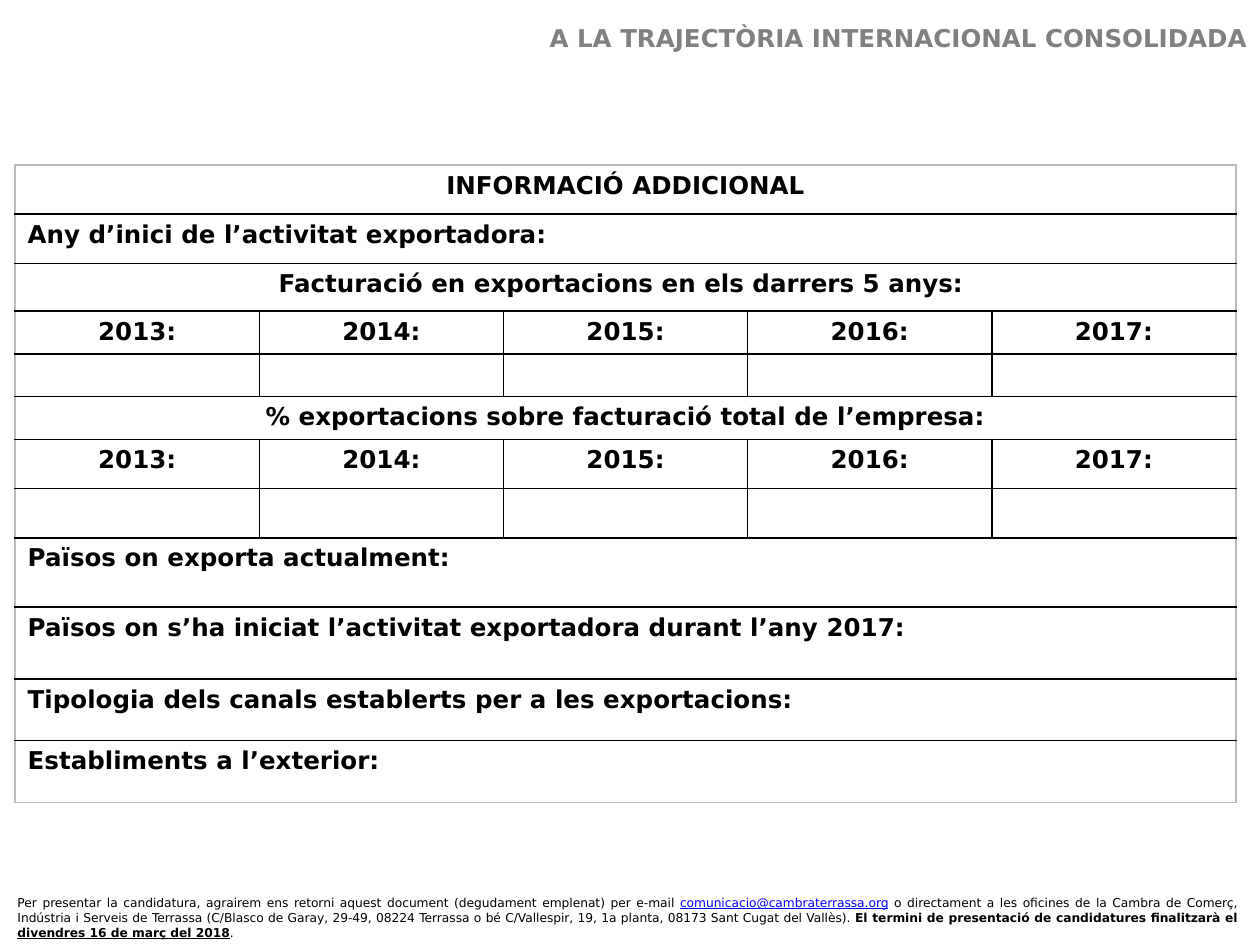
"""Build the additional-information form for the export award."""
from lxml import etree
from pptx import Presentation
from pptx.dml.color import RGBColor
from pptx.enum import shapes, text
from pptx.oxml.ns import qn
from pptx.util import Inches, Pt

FONT = "DejaVu Sans"
HUES = {"ink": "000000", "grey": "808080", "edge": "BBBBBB",
        "link": "0000FF", "paper": "FFFFFF"}
LEFT, MID, RIGHT, FULL = (text.PP_ALIGN.LEFT, text.PP_ALIGN.CENTER,
                          text.PP_ALIGN.RIGHT, text.PP_ALIGN.JUSTIFY)
TITLE = "A LA TRAJECTÒRIA INTERNACIONAL CONSOLIDADA"
YEARS = [f"{year}:" for year in range(2013, 2018)]
BLANK = [""] * len(YEARS)
ROWS = [
    (0.39, MID, ["INFORMACIÓ ADDICIONAL"]),
    (0.39, LEFT, ["Any d’inici de l’activitat exportadora:"]),
    (0.38, MID, ["Facturació en exportacions en els darrers 5 anys: "]),
    (0.34, MID, YEARS),
    (0.34, MID, BLANK),
    (0.34, MID, ["% exportacions sobre facturació total de l’empresa:"]),
    (0.39, MID, YEARS),
    (0.39, MID, BLANK),
    (0.55, LEFT, ["Països on exporta actualment:"]),
    (0.57, LEFT, ["Països on s’ha iniciat l’activitat exportadora durant l’any 2017:"]),
    (0.49, LEFT, ["Tipologia dels canals establerts per a les exportacions:"]),
    (0.49, LEFT, ["Establiments a l’exterior:"]),
]
NOTE = [
    ("Per presentar la candidatura, agrairem ens retorni aquest document "
     "(degudament emplenat) per e-mail ", "ink", False, False),
    ("comunicacio@cambraterrassa.org", "link", False, True),
    (" o directament a les oficines de la Cambra de Comerç, Indústria i Serveis "
     "de Terrassa (C/Blasco de Garay, 29-49, 08224 Terrassa o bé C/Vallespir, 19, "
     "1a planta, 08173 Sant Cugat del Vallès). ", "ink", False, False),
    ("El termini de presentació de candidatures finalitzarà el ", "ink", True, False),
    ("divendres 16 de març del 2018", "ink", True, True),
    (".", "ink", False, False),
]


def tint(name):
    return RGBColor.from_string(HUES[name])


def style(para, size, align, hue="ink", bold=None):
    para.alignment = align
    font = para.font
    font.name, font.size, font.bold = FONT, Pt(size), bold
    font.color.rgb = tint(hue)


def border(cell, outer):
    props = cell._tc.get_or_add_tcPr()
    for spot, side in enumerate("LRTB"):
        line = etree.Element(qn(f"a:ln{side}"), w=str(Pt(1)))
        fill = etree.SubElement(line, qn("a:solidFill"))
        hue = HUES["edge" if side in outer else "ink"]
        etree.SubElement(fill, qn("a:srgbClr"), val=hue)
        props.insert(spot, line)


def add_title(slide):
    box = slide.shapes.add_textbox(Inches(2.8), Inches(0.13), Inches(7.2), Inches(0.34))
    box.text_frame.word_wrap = True
    para = box.text_frame.paragraphs[0]
    para.text = TITLE
    style(para, 14, RIGHT, "grey", True)


def add_note(slide):
    box = slide.shapes.add_shape(shapes.MSO_SHAPE.RECTANGLE, Inches(0.04),
                                 Inches(7.06), Inches(9.88), Inches(0.4))
    box.shadow.inherit = False
    box.fill.solid()
    box.fill.fore_color.rgb = box.line.color.rgb = tint("paper")
    box.line.width = Pt(0.75)
    frame = box.text_frame
    frame.word_wrap = True
    frame.vertical_anchor = text.MSO_ANCHOR.TOP
    para = frame.paragraphs[0]
    style(para, 7, FULL)
    para.space_after = Pt(10)
    for words, hue, bold, under in NOTE:
        run = para.add_run()
        run.text = words
        run.font.color.rgb = tint(hue)
        run.font.bold, run.font.underline = bold, under


def add_form(slide):
    count = len(YEARS)
    high = sum(row[0] for row in ROWS)
    table = slide.shapes.add_table(len(ROWS), count, Inches(0.12), Inches(1.31),
                                   Inches(9.69), Inches(high)).table
    table.first_row = table.horz_banding = False
    for r, (tall, align, words) in enumerate(ROWS):
        table.rows[r].height = Inches(tall)
        for c in range(count):
            cell = table.cell(r, c)
            cell.fill.background()
            edges = {"L": c == 0 or len(words) == 1,
                     "R": c == count - 1 or len(words) == 1,
                     "T": r == 0, "B": r == len(ROWS) - 1}
            border(cell, [side for side, on in edges.items() if on])
        if len(words) == 1:
            table.cell(r, 0).merge(table.cell(r, count - 1))
        for c, word in enumerate(words):
            cell = table.cell(r, c)
            para = cell.text_frame.paragraphs[0]
            style(para, 14, align, bold=True)
            if word:
                para.text = word
            else:
                cell.margin_top = cell.margin_bottom = 0


def main():
    deck = Presentation()
    deck.slide_width, deck.slide_height = Inches(10), Inches(7.5)
    slide = deck.slides.add_slide(deck.slide_layouts[6])
    add_title(slide)
    add_note(slide)
    add_form(slide)
    deck.save("out.pptx")


if __name__ == "__main__":
    main()
